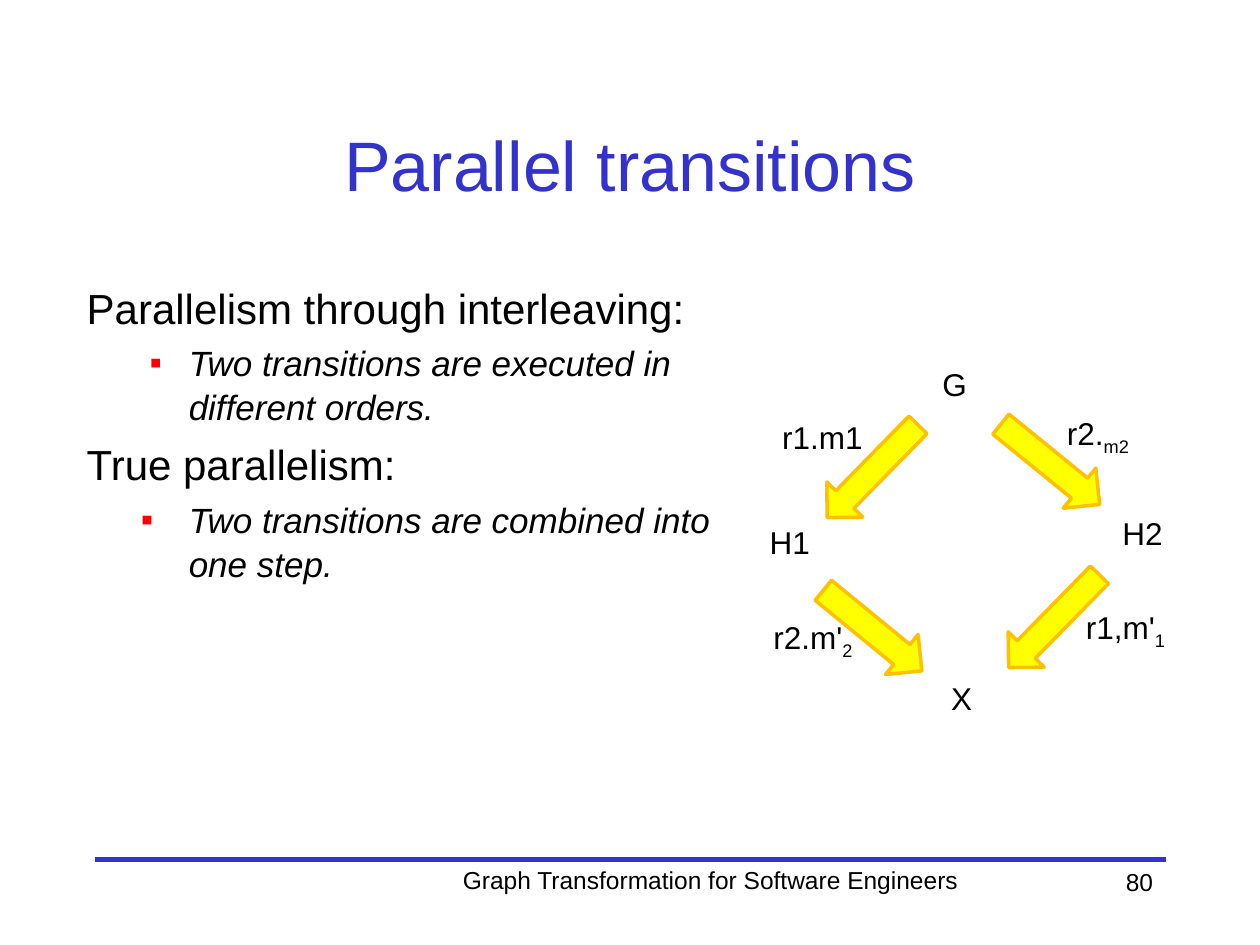
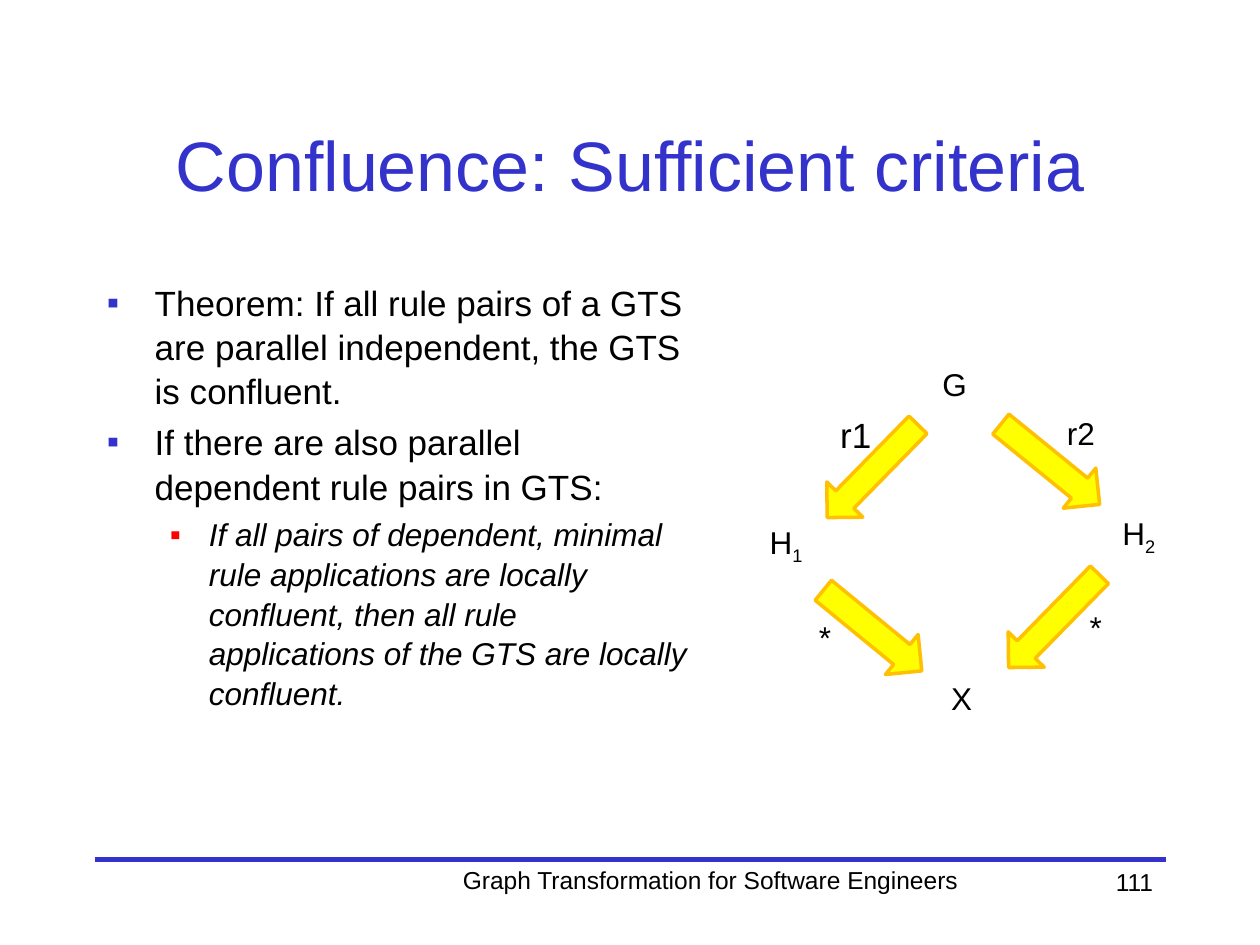
import pptx
import pptx.dml.color
import pptx.enum.shapes
import pptx.enum.text
import pptx.oxml.ns
import pptx.util
from lxml import etree
from dataclasses import dataclass

Inches = pptx.util.Inches
Align = pptx.enum.text.PP_ALIGN
Anchor = pptx.enum.text.MSO_ANCHOR


@dataclass(frozen=True)
class Theme:
    font: str = "Arial"
    blue: str = "3333CC"
    red: str = "FF0000"
    black: str = "000000"
    arrow_fill: str = "FFFF00"
    arrow_line: str = "FFC000"
    title: int = 40
    heading: int = 24
    body: int = 20
    label: int = 18
    footer: int = 14
    line_spacing: float = 1.05
    space_before: float = 0.2


THEME = Theme()

# Content: paragraph styles, as (size, italic, bullet colour, margin, hanging indent)
STYLES = {
    "heading": (THEME.heading, False, None, 0, 0),
    "point": (THEME.body, False, THEME.blue, 0.38, 0.38),
    "detail": (THEME.body, True, THEME.red, 0.81, 0.31),
    "wide detail": (THEME.body, True, THEME.red, 0.81, 0.38),
    "small detail": (THEME.label, True, THEME.red, 0.81, 0.31),
}

# Content: labels are (text, subscript, left, top, width[, size])
SLIDES = [
    {
        "title": "Parallel transitions",
        "number": "80",
        "body_at": (0.59, 2.17, 5.16, 4.5),
        "body": [
            ("heading", "Parallelism through interleaving:"),
            ("detail", "Two transitions are executed in different orders."),
            ("heading", "True parallelism:"),
            ("wide detail", "Two transitions are combined into one step."),
        ],
        "states": [("H1", ""), ("H2", "")],
        "steps": [
            ("r2.", "m2", 8.37, 3.24, 1.23),
            ("r1.m1", "", 6.11, 3.27, 1.23),
            ("r2.m'", "2", 6.04, 4.86, 1.23),
            ("r1,m'", "1", 8.52, 4.78, 1.23),
        ],
    },
    {
        "title": "Confluence: Sufficient criteria",
        "number": "111",
        "body_at": (0.75, 2.17, 4.8, 4.5),
        "body": [
            ("point", "Theorem: If all rule pairs of a GTS are parallel "
                      "independent, the GTS is confluent."),
            ("point", "If there are also parallel dependent rule pairs in GTS:"),
            ("small detail", "If all pairs of dependent, minimal rule applications "
                             "are locally confluent, then all rule applications "
                             "of the GTS are locally confluent."),
        ],
        "states": [("H", "1"), ("H", "2")],
        "steps": [
            ("r2", "", 8.37, 3.24, 1.23),
            ("r1", "", 6.57, 3.23, 0.76, THEME.body),
            ("*", "", 6.4, 4.86, 0.86),
            ("*", "", 8.55, 4.78, 1.23),
        ],
    },
]

# The diamond shared by both slides
STATE_PLACES = [(6.01, 4.1, 0.66), (8.81, 4.03, 0.66)]
END_STATES = [("G", "", 7.38, 2.85, 0.41), ("X", "", 7.45, 5.34, 0.41)]
ARROWS = [  # left, top, width, height, rotation
    (7.83, 3.48, 1.01, 0.41, 39.1),
    (6.42, 4.8, 1.01, 0.41, 39.3),
    (6.41, 3.54, 1.03, 0.4, 134.4),
    (7.85, 4.73, 1.03, 0.4, 134.4),
]
FOOTER = "Graph Transformation for Software Engineers"


def rgb(value):
    return pptx.dml.color.RGBColor.from_string(value)


def set_all(target, values):
    for name, value in values.items():
        setattr(target, name, value)


def add_span(para, text, size, color=THEME.black, italic=False):
    span = para.add_run()
    span.text = text
    set_all(span.font, {"name": THEME.font, "size": pptx.util.Pt(size), "italic": italic})
    span.font.color.rgb = rgb(color)
    return span


def add_box(page, place, anchor=Anchor.TOP):
    box = page.shapes.add_textbox(*map(Inches, place))
    set_all(box.text_frame, {"word_wrap": True, "vertical_anchor": anchor})
    return box.text_frame


def add_line_of_text(page, place, text, size, align, color=THEME.black, anchor=Anchor.TOP):
    para = add_box(page, place, anchor).paragraphs[0]
    para.alignment = align
    add_span(para, text, size, color)


def add_label(page, text, subscript, left, top, width, size=THEME.label):
    para = add_box(page, (left, top, width, 0.4)).paragraphs[0]
    add_span(para, text, size)
    if subscript:
        span = add_span(para, subscript, size)
        span.font._element.set("baseline", "-25000")


def add_bullet(para, color, margin, hanging):
    properties = para._p.get_or_add_pPr()
    properties.set("marL", str(Inches(margin)))
    properties.set("indent", str(-Inches(hanging)))
    tag = pptx.oxml.ns.qn
    bullet_color = etree.SubElement(properties, tag("a:buClr"))
    etree.SubElement(bullet_color, tag("a:srgbClr"), val=color)
    etree.SubElement(properties, tag("a:buFont"), typeface=THEME.font)
    etree.SubElement(properties, tag("a:buChar"), char="▪")


def add_body(page, place, paragraphs):
    frame = add_box(page, place)
    for index, (style, text) in enumerate(paragraphs):
        size, italic, bullet, margin, hanging = STYLES[style]
        para = frame.add_paragraph() if index else frame.paragraphs[0]
        set_all(para, {
            "line_spacing": THEME.line_spacing,
            "space_before": pptx.util.Pt(size * THEME.space_before),
        })
        if bullet:
            add_bullet(para, bullet, margin, hanging)
        add_span(para, text, size, italic=italic)


def add_arrow(page, left, top, width, height, rotation):
    arrow = page.shapes.add_shape(
        pptx.enum.shapes.MSO_SHAPE.RIGHT_ARROW, *map(Inches, (left, top, width, height)))
    arrow.rotation = rotation
    arrow.shadow.inherit = False
    arrow.fill.solid()
    arrow.fill.fore_color.rgb = rgb(THEME.arrow_fill)
    arrow.line.color.rgb = rgb(THEME.arrow_line)
    arrow.line.width = pptx.util.Pt(2)


def add_frame(page, title, number):
    # Rule, title, footer and page number
    rule = page.shapes.add_connector(
        pptx.enum.shapes.MSO_CONNECTOR.STRAIGHT, *map(Inches, (0.75, 6.82, 9.25, 6.82)))
    rule.line.color.rgb = rgb(THEME.blue)
    rule.line.width = pptx.util.Pt(3)
    etree.SubElement(rule._element.spPr, pptx.oxml.ns.qn("a:effectLst"))
    add_line_of_text(page, (0.75, 0.67, 8.5, 1.25), title, THEME.title,
                     Align.CENTER, THEME.blue, Anchor.MIDDLE)
    add_line_of_text(page, (2.72, 6.82, 5.84, 0.5), FOOTER, THEME.footer, Align.CENTER)
    add_line_of_text(page, (7.17, 6.83, 2.08, 0.5), number, THEME.footer, Align.RIGHT)


def add_diamond(page, states, steps):
    for arrow in ARROWS:
        add_arrow(page, *arrow)
    side_states = [state + place for state, place in zip(states, STATE_PLACES)]
    for label in END_STATES + side_states + steps:
        add_label(page, *label)


def main():
    deck = pptx.Presentation()
    set_all(deck, {"slide_width": Inches(10), "slide_height": Inches(7.5)})
    for content in SLIDES:
        page = deck.slides.add_slide(deck.slide_layouts[6])
        add_frame(page, content["title"], content["number"])
        add_body(page, content["body_at"], content["body"])
        add_diamond(page, content["states"], content["steps"])
    deck.save("out.pptx")


if __name__ == "__main__":
    main()
